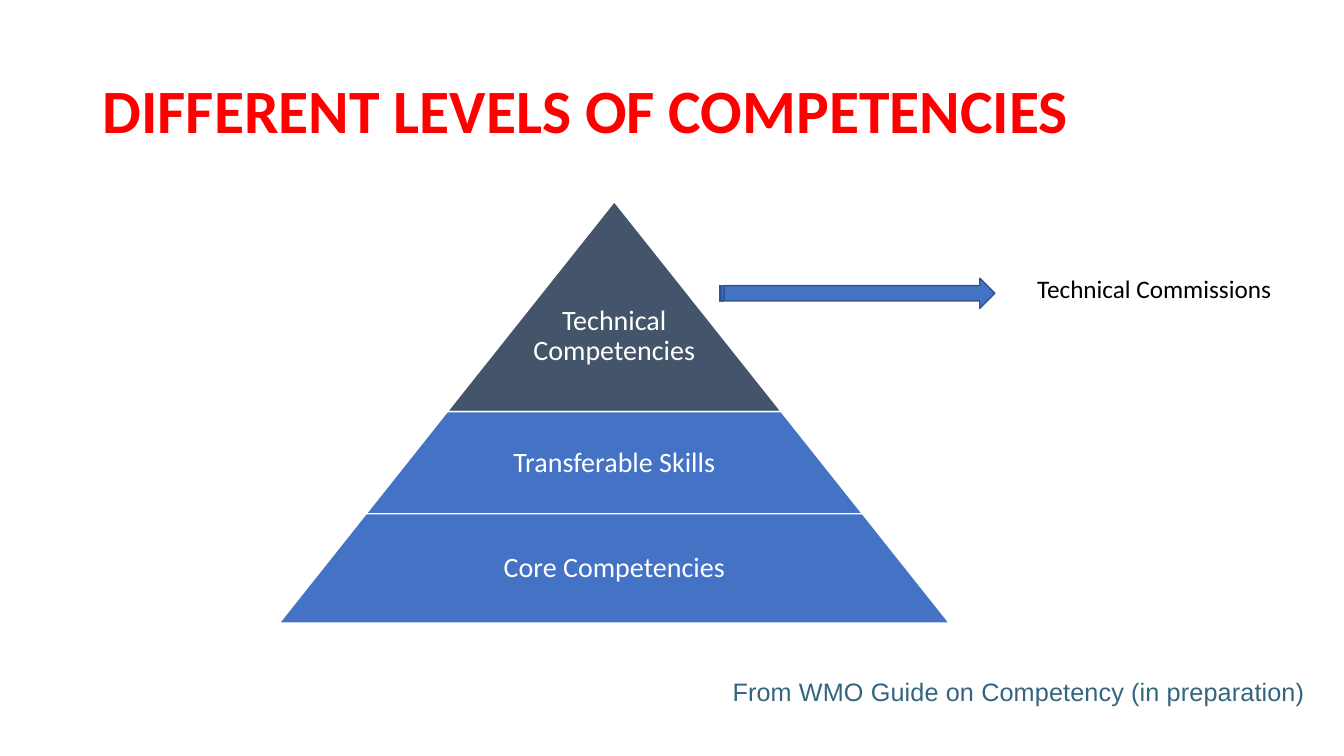
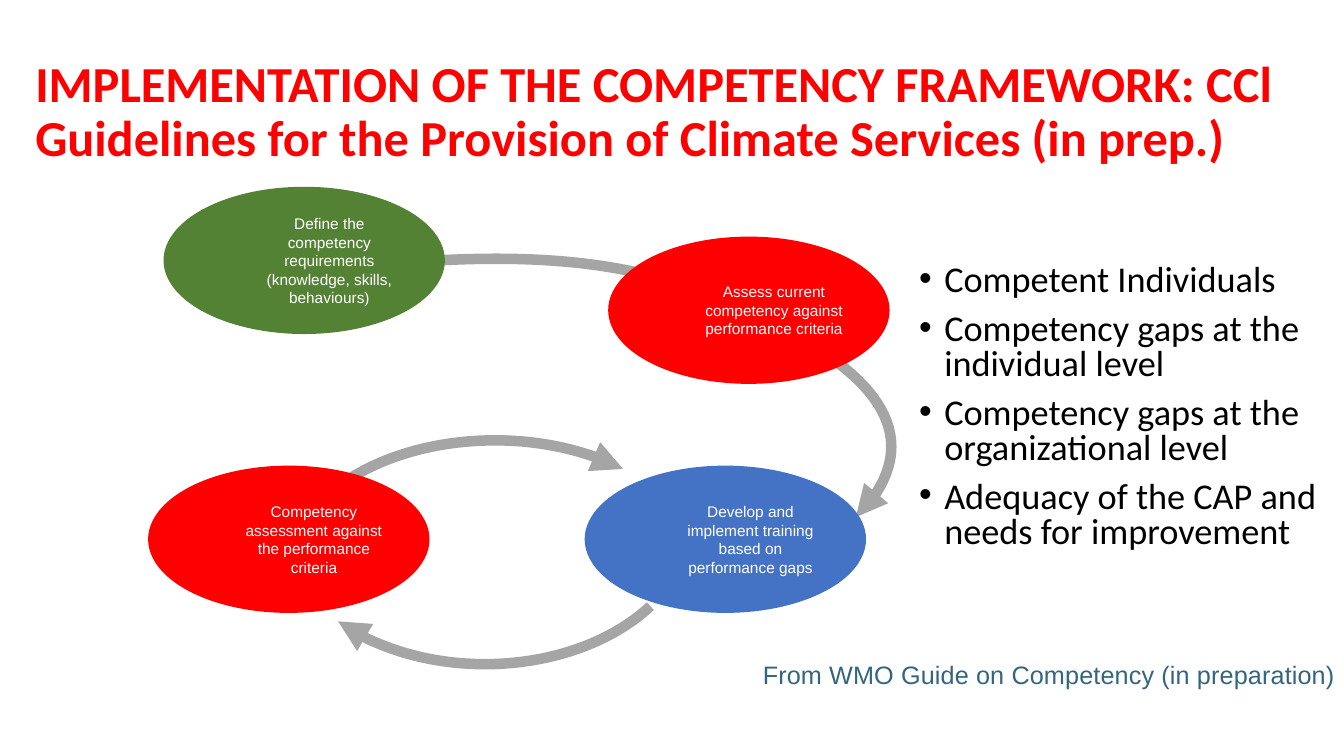
from dataclasses import dataclass

from lxml import etree
from pptx import Presentation
from pptx.dml.color import RGBColor
from pptx.enum.shapes import MSO_SHAPE
from pptx.enum.text import MSO_ANCHOR, MSO_AUTO_SIZE, PP_ALIGN
from pptx.oxml.ns import qn
from pptx.util import Pt

TRAPEZOID = MSO_SHAPE.TRAPEZOID
ELLIPSE = MSO_SHAPE.OVAL
ARC = MSO_SHAPE.ARC
STRIPED_ARROW = MSO_SHAPE.STRIPED_RIGHT_ARROW
LEFT, CENTER = PP_ALIGN.LEFT, PP_ALIGN.CENTER
MIDDLE = MSO_ANCHOR.MIDDLE
TITLE_ONLY = 5


@dataclass(frozen=True)
class Theme:
    heading_font: str = "Calibri"
    note_font: str = "Arial"
    red: str = "FF0000"
    blue: str = "4472C4"
    dark_blue: str = "325491"
    slate: str = "44546A"
    green: str = "548235"
    gray: str = "A5A5A5"
    teal: str = "34657F"
    white: str = "FFFFFF"
    black: str = "000000"
    level_size: float = 20
    label_size: float = 18
    bullet_size: float = 25.9
    step_size: float = 11


@dataclass(frozen=True)
class Level:
    text: str
    height: float
    fill: str


@dataclass(frozen=True)
class Step:
    text: str
    x: float
    y: float
    fill: str


@dataclass(frozen=True)
class ArcArrow:
    x: float
    y: float
    w: float
    h: float
    start: float
    end: float
    rotation: float


THEME = Theme()

# Pyramid, from the apex down
LEVELS = [
    Level("Technical\nCompetencies", 150, THEME.slate),
    Level("Transferable Skills", 73, THEME.blue),
    Level("Core Competencies", 78, THEME.blue),
]
PYRAMID_CENTER, PYRAMID_TOP, PYRAMID_SLOPE = 438.8, 144, 0.795

# Competency cycle
STEP_W, STEP_H = 201, 105.2
STEPS = [
    Step("Define the competency requirements (knowledge, skills, behaviours)",
         116.8, 133.4, THEME.green),
    Step("Assess current competency against performance criteria",
         434.4, 169, THEME.red),
    Step("Develop and implement training based on performance gaps",
         417.6, 332.6, THEME.blue),
    Step("Competency assessment against the performance criteria",
         105.8, 332.6, THEME.red),
]
ARCS = [
    ArcArrow(198.7, 267.8, 295.2, 206.6, 124.58, 195.16, 180),
    ArcArrow(205.9, 314.6, 295.2, 189.4, 128.34, 192.56, 0),
]
CURVE = [(235.4, 193), (412.6, 171.4), (483.8, 195.1), (558, 234),
         (632.9, 272.9), (658.8, 324.7), (611.3, 369.4)]
BULLETS = [
    "Competent Individuals",
    "Competency gaps at the individual level",
    "Competency gaps at the organizational level",
    "Adequacy of the CAP and needs for improvement",
]


def rgb(color: str) -> RGBColor:
    return RGBColor.from_string(color)


def write(p, text: str, *, size: float, color: str,
          font: str = THEME.heading_font, bold: bool = False, align=LEFT,
          spacing=None, before: float = 0, after: float = 0,
          margin: float = 0, hanging: float = 0, bullet: str = "",
          tracking: float = 0) -> None:
    """Fill one paragraph; a hanging indent needs a bullet."""
    p.text = text
    p.alignment = align
    if spacing is not None:
        p.line_spacing = spacing
    p.space_before, p.space_after = Pt(before), Pt(after)
    pPr = p._p.get_or_add_pPr()
    pPr.set("marL", str(Pt(margin)))
    pPr.set("indent", str(Pt(-hanging)))
    if bullet:
        etree.SubElement(pPr, qn("a:buFont")).set("typeface", "Arial")
        etree.SubElement(pPr, qn("a:buChar")).set("char", bullet)
    for r in p.runs:
        r.font.name, r.font.size, r.font.bold = font, Pt(size), bold
        r.font.color.rgb = rgb(color)
        if tracking:
            r._r.get_or_add_rPr().set("spc", str(round(tracking * 100)))


def add_box(slide, x: float, y: float, w: float, h: float, wrap: bool = True):
    tf = slide.shapes.add_textbox(Pt(x), Pt(y), Pt(w), Pt(h)).text_frame
    tf.word_wrap = wrap
    return tf


def style(sp, fill: str = "", line: str = "", width: float = 1) -> None:
    sp.shadow.inherit = False
    if fill:
        sp.fill.solid()
        sp.fill.fore_color.rgb = rgb(fill)
    else:
        sp.fill.background()
    if line:
        sp.line.color.rgb = rgb(line)
        sp.line.width = Pt(width)
    else:
        sp.line.fill.background()


def add_shape(slide, kind, x: float, y: float, w: float, h: float, **look):
    sp = slide.shapes.add_shape(kind, Pt(x), Pt(y), Pt(w), Pt(h))
    style(sp, **look)
    return sp


def center_text(sp, bottom: float = 0, wrap: bool = True):
    tf = sp.text_frame
    tf.margin_left = tf.margin_right = tf.margin_top = 0
    tf.margin_bottom = Pt(bottom)
    tf.vertical_anchor, tf.word_wrap = MIDDLE, wrap
    return tf.paragraphs[0]


def add_arrowhead(sp) -> None:
    ln = sp.line._get_or_add_ln()
    etree.SubElement(ln, qn("a:tailEnd")).set("type", "triangle")


def add_slide(prs, title: str, x: float, w: float, size: float):
    slide = prs.slides.add_slide(prs.slide_layouts[TITLE_ONLY])
    sp = slide.shapes.title
    sp.left, sp.top, sp.width, sp.height = Pt(x), Pt(28.8), Pt(w), Pt(104.4)
    tf = sp.text_frame
    tf.vertical_anchor, tf.word_wrap = MIDDLE, True
    tf.auto_size = MSO_AUTO_SIZE.NONE
    write(tf.paragraphs[0], title, size=size, color=THEME.red, bold=True,
          spacing=0.9)
    return slide


def add_source_note(slide, x: float, y: float) -> None:
    tf = add_box(slide, x, y, 460.8, 36.5, wrap=False)
    tf.auto_size = MSO_AUTO_SIZE.SHAPE_TO_FIT_TEXT
    write(tf.paragraphs[0], "From WMO Guide on Competency (in preparation)",
          size=THEME.label_size, color=THEME.teal, font=THEME.note_font,
          spacing=Pt(29), after=16, margin=36, tracking=0.1)


def add_pyramid(slide) -> None:
    depth = 0.0
    for level in LEVELS:
        top = PYRAMID_TOP + depth
        depth += level.height
        half = PYRAMID_SLOPE * depth
        sp = add_shape(slide, TRAPEZOID, PYRAMID_CENTER - half, top,
                       2 * half, level.height, fill=level.fill,
                       line=THEME.white)
        sp.adjustments[0] = PYRAMID_SLOPE
        write(center_text(sp, bottom=7, wrap=False), level.text,
              size=THEME.level_size, color=THEME.white, align=CENTER,
              spacing=0.9)


def add_curve(slide, points: list[tuple[float, float]]) -> None:
    """Draw an arrow along cubic Bézier segments."""
    start, *rest = [(Pt(x), Pt(y)) for x, y in points]
    builder = slide.shapes.build_freeform(*start)
    builder.add_line_segments(rest, close=False)
    sp = builder.convert_to_shape()
    style(sp, line=THEME.gray, width=7.5)
    add_arrowhead(sp)
    # Join every three line segments into one curve
    outline = next(sp._element.iter(qn("a:path")))
    segments = outline.findall(qn("a:lnTo"))
    for i in range(0, len(segments), 3):
        curve = etree.SubElement(outline, qn("a:cubicBezTo"))
        for segment in segments[i:i + 3]:
            curve.append(segment[0])
            outline.remove(segment)


def add_cycle(slide) -> None:
    add_curve(slide, CURVE)
    for arc in ARCS:
        sp = add_shape(slide, ARC, arc.x, arc.y, arc.w, arc.h,
                       line=THEME.gray, width=7.5)
        sp.adjustments[0], sp.adjustments[1] = arc.start, arc.end
        sp.rotation = arc.rotation
        add_arrowhead(sp)
    for step in STEPS:
        sp = add_shape(slide, ELLIPSE, step.x, step.y, STEP_W, STEP_H,
                       fill=step.fill)
        write(center_text(sp), step.text, size=THEME.step_size,
              color=THEME.white, font=THEME.note_font, align=CENTER,
              margin=36)


def add_bullets(slide) -> None:
    tf = add_box(slide, 649.4, 185.8, 313.2, 212.4)
    for i, text in enumerate(BULLETS):
        p = tf.add_paragraph() if i else tf.paragraphs[0]
        write(p, text, size=THEME.bullet_size, color=THEME.black, spacing=0.8,
              before=10 if i else 0, margin=18, hanging=18, bullet="•")


def main() -> None:
    prs = Presentation()
    prs.slide_width, prs.slide_height = Pt(960), Pt(540)

    # Levels of competencies
    slide = add_slide(prs, "DIFFERENT LEVELS OF COMPETENCIES", 66, 828, 44)
    add_pyramid(slide)
    add_source_note(slide, 480.2, 472.3)
    add_shape(slide, STRIPED_ARROW, 514, 198.7, 196.6, 21.6,
              fill=THEME.blue, line=THEME.dark_blue)
    tf = add_box(slide, 733.7, 191.5, 190.8, 29)
    write(tf.paragraphs[0], "Technical Commissions", size=THEME.label_size,
          color=THEME.black)

    # Implementation cycle
    slide = add_slide(
        prs, "IMPLEMENTATION OF THE COMPETENCY FRAMEWORK: CCl Guidelines "
        "for the Provision of Climate Services (in prep.)", 18, 915, 36)
    add_cycle(slide)
    add_source_note(slide, 501.8, 460)
    add_bullets(slide)

    prs.save("out.pptx")


if __name__ == "__main__":
    main()
